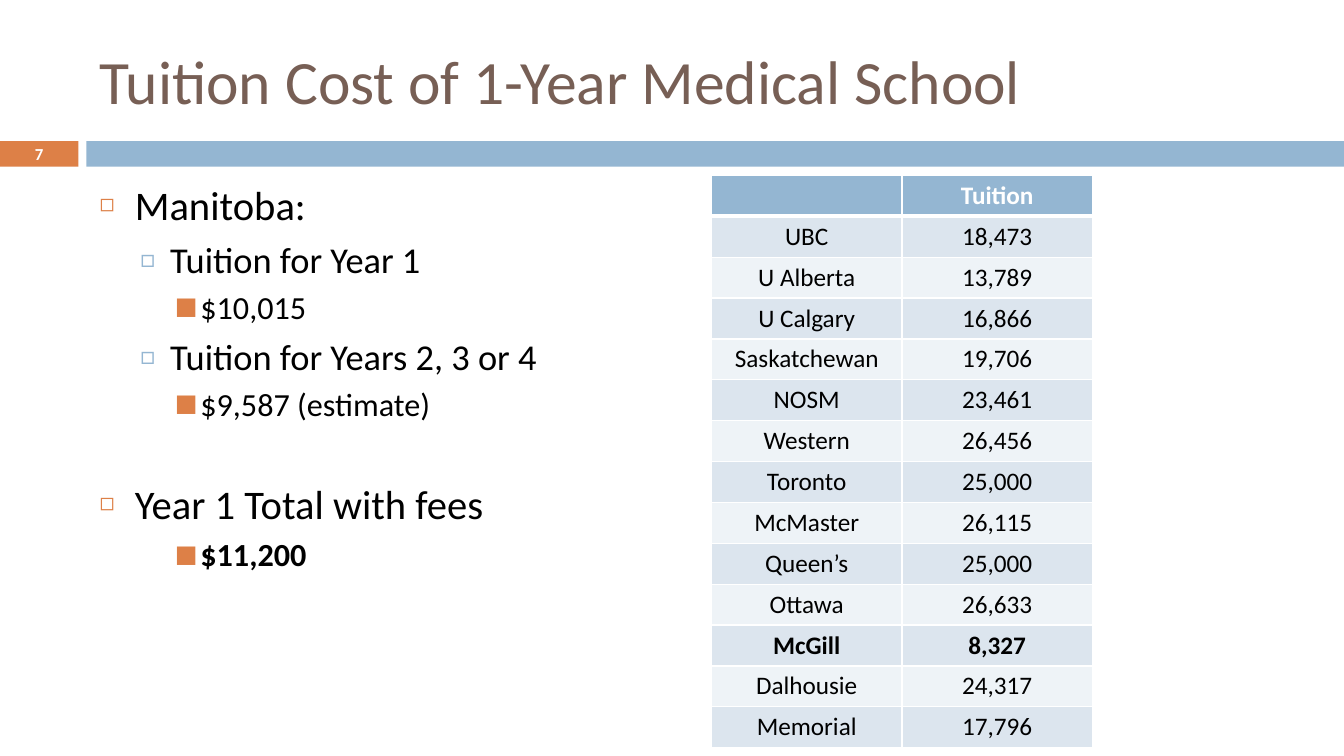
from dataclasses import dataclass

from lxml import etree
from pptx import Presentation
from pptx.dml.color import RGBColor
from pptx.enum.shapes import MSO_SHAPE
from pptx.enum.text import MSO_ANCHOR, PP_ALIGN
from pptx.oxml.ns import qn
from pptx.util import Cm, Pt

RECT = MSO_SHAPE.RECTANGLE
LEFT, CENTER = PP_ALIGN.LEFT, PP_ALIGN.CENTER
TOP, MIDDLE = MSO_ANCHOR.TOP, MSO_ANCHOR.MIDDLE


@dataclass
class Level:
    mark: str
    tint: str
    scale: int
    size: float
    left: float
    hang: float
    before: float


@dataclass
class Theme:
    font: str = "Calibri"
    ink: str = "000000"
    paper: str = "FFFFFF"
    brown: str = "775F55"
    orange: str = "DD8047"
    blue: str = "94B6D2"
    bands: tuple = ("DCE5EE", "EEF3F7")
    title: float = 44
    cell: float = 18
    number: float = 12

    def levels(self):
        return (
            Level("◻", self.orange, 60, 29, 0.89, 0.89, 7),
            Level("□", self.blue, 70, 26, 1.78, 0.76, 5.5),
            Level("■", self.orange, 75, 23, 2.54, 0.64, 5),
        )


# level, text, bold, extra space before in points
POINTS = (
    (0, "Manitoba:", False, 0),
    (1, "Tuition for Year 1", False, 0),
    (2, "$10,015", False, 0),
    (1, "Tuition for Years 2, 3 or 4", False, 0),
    (2, "$9,587 (estimate)", False, 0),
    (0, "Year 1 Total with fees", False, 33),
    (2, "$11,200", True, 0),
)

ROWS = (
    ("", "Tuition"),
    ("UBC", "18,473"),
    ("U Alberta", "13,789"),
    ("U Calgary", "16,866"),
    ("Saskatchewan", "19,706"),
    ("NOSM", "23,461"),
    ("Western", "26,456"),
    ("Toronto", "25,000"),
    ("McMaster", "26,115"),
    ("Queen’s", "25,000"),
    ("Ottawa", "26,633"),
    ("McGill", "8,327"),
    ("Dalhousie", "24,317"),
    ("Memorial", "17,796"),
)
STRONG = ("", "McGill")


class Deck:
    def __init__(self, theme):
        self.theme = theme
        self.file = Presentation()
        self.file.slide_width, self.file.slide_height = Cm(33.87), Cm(19.05)
        self.slide = self.file.slides.add_slide(self.file.slide_layouts[6])

    def bar(self, x, y, w, h, color):
        shape = self.slide.shapes.add_shape(RECT, Cm(x), Cm(y), Cm(w), Cm(h))
        shape.shadow.inherit = False
        shape.fill.solid()
        shape.fill.fore_color.rgb = RGBColor.from_string(color)
        shape.line.fill.background()

    def frame(self, x, y, w, h, anchor=TOP):
        box = self.slide.shapes.add_textbox(Cm(x), Cm(y), Cm(w), Cm(h))
        frame = box.text_frame
        frame.word_wrap = True
        frame.vertical_anchor = anchor
        return frame

    def run(self, para, text, size, color, bold=False, align=LEFT):
        para.alignment = align
        run = para.add_run()
        run.text = text
        font = run.font
        font.name, font.size, font.bold = self.theme.font, Pt(size), bold
        font.color.rgb = RGBColor.from_string(color)

    def label(self, x, y, w, h, text, size, color, bold=False, align=LEFT):
        para = self.frame(x, y, w, h, MIDDLE).paragraphs[0]
        self.run(para, text, size, color, bold, align)

    def bullet(self, para, level):
        props = para._p.get_or_add_pPr()
        props.set("marL", str(Cm(level.left)))
        props.set("indent", str(-Cm(level.hang)))
        tint = etree.SubElement(props, qn("a:buClr"))
        etree.SubElement(tint, qn("a:srgbClr"), val=level.tint)
        etree.SubElement(props, qn("a:buSzPct"), val=str(level.scale * 1000))
        etree.SubElement(props, qn("a:buFont"), typeface=self.theme.font)
        etree.SubElement(props, qn("a:buChar"), char=level.mark)

    def outline(self, x, y, w, h, points):
        frame = self.frame(x, y, w, h)
        levels = self.theme.levels()
        for i, (depth, text, bold, extra) in enumerate(points):
            para = frame.add_paragraph() if i else frame.paragraphs[0]
            level = levels[depth]
            para.level = depth
            para.space_before = Pt(level.before + extra)
            self.bullet(para, level)
            self.run(para, text, level.size, self.theme.ink, bold)

    def border(self, cell, side, width):
        line = etree.SubElement(
            cell._tc.get_or_add_tcPr(), qn("a:ln" + side), w=str(Pt(width)))
        fill = etree.SubElement(line, qn("a:solidFill"))
        etree.SubElement(fill, qn("a:srgbClr"), val=self.theme.paper)

    def table(self, x, y, wide, high, rows):
        theme = self.theme
        count, cols = len(rows), len(rows[0])
        grid = self.slide.shapes.add_table(
            count, cols, Cm(x), Cm(y), Cm(wide * cols), Cm(high * count)).table
        for r, row in enumerate(rows):
            fill = theme.bands[(r - 1) % 2] if r else theme.blue
            color = theme.ink if r else theme.paper
            for c, text in enumerate(row):
                cell = grid.cell(r, c)
                for side in "LRTB":
                    edge = (r == 0 and side == "B") or (r == 1 and side == "T")
                    self.border(cell, side, 3 if edge else 1)
                cell.fill.solid()
                cell.fill.fore_color.rgb = RGBColor.from_string(fill)
                if text:
                    self.run(cell.text_frame.paragraphs[0], text, theme.cell,
                             color, row[0] in STRONG, CENTER)


def main():
    theme = Theme()
    deck = Deck(theme)
    deck.bar(0, 3.56, 1.98, 0.64, theme.orange)
    deck.bar(2.18, 3.56, 31.69, 0.64, theme.blue)
    deck.label(2.26, 0.64, 30.2, 2.74, "Tuition Cost of 1-Year Medical School",
               theme.title, theme.brown)
    deck.outline(2.26, 4.42, 14.4, 12.7, POINTS)
    deck.table(17.93, 4.42, 4.8, 1.03, ROWS)
    deck.label(0, 3.53, 1.98, 0.69, "7", theme.number, theme.paper, True, CENTER)
    deck.file.save("out.pptx")


if __name__ == "__main__":
    main()
